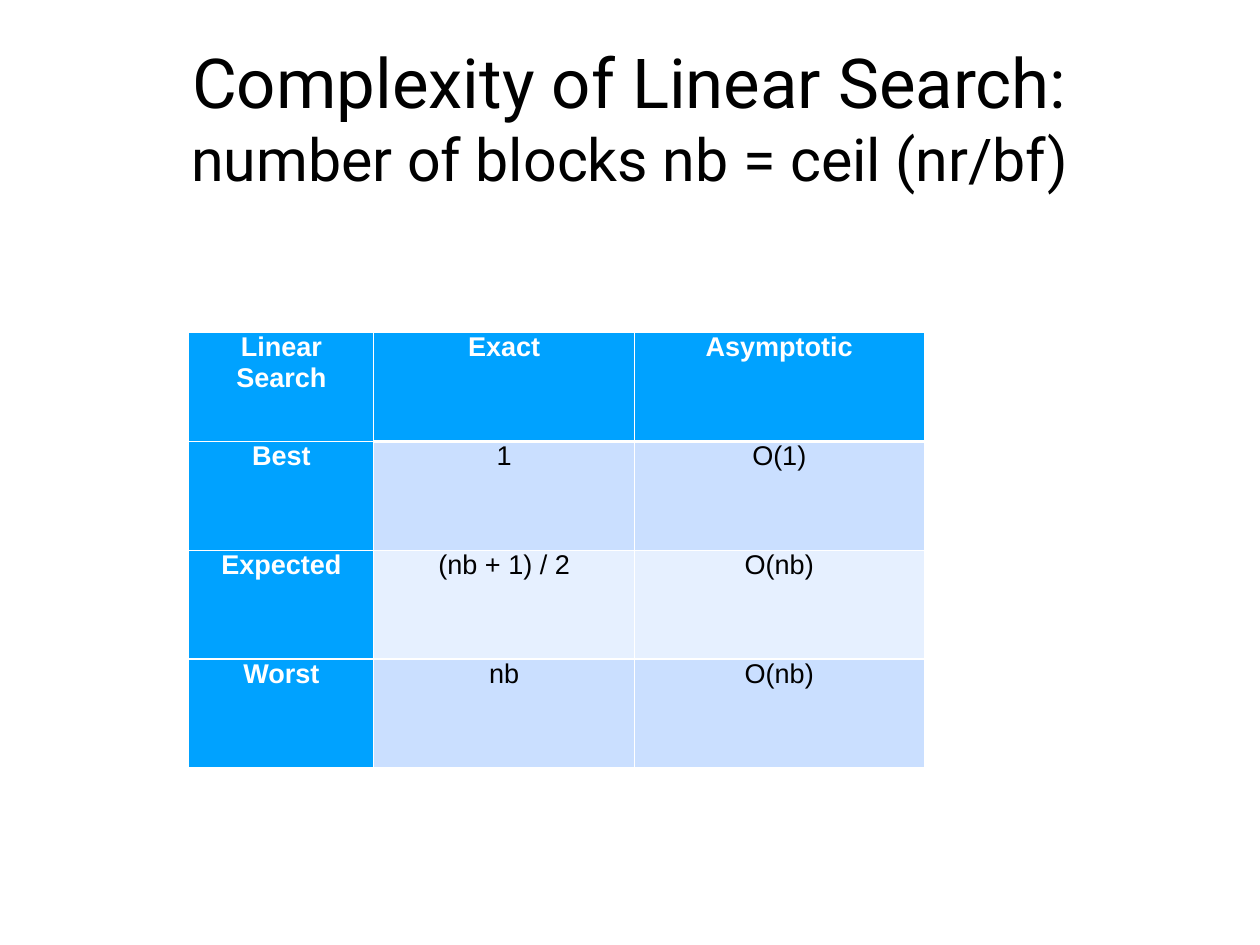
from lxml import etree
from pptx import Presentation
from pptx.dml.color import RGBColor
from pptx.enum import text
from pptx.oxml.ns import qn
from pptx.util import Pt

TITLE = [("Complexity of Linear Search:", 56), ("number of blocks nb = ceil (nr/bf)", 48)]
ROWS = [
    ("Linear\nSearch", "Exact", "Asymptotic"),
    ("Best", "1", "O(1)"),
    ("Expected", "(nb + 1) / 2", "O(nb)"),
    ("Worst", "nb", "O(nb)"),
]
COLORS = {
    "heading": "00A2FF",
    "odd": "CADFFF",
    "even": "E6F0FF",
    "light": "FFFFFF",
    "dark": "000000",
}
COLUMN_WIDTHS = [150.5, 211.7, 235.4]
ROW_HEIGHT = 88.55
TABLE_LEFT, TABLE_TOP = 153.4, 270


def color(name):
    return RGBColor.from_string(COLORS[name])


def set_margins(holder, size):
    for side in ("left", "top", "right", "bottom"):
        setattr(holder, f"margin_{side}", Pt(size))


def format_paragraph(para, font, size, ink, bold=False):
    para.alignment = text.PP_ALIGN.CENTER
    for span in para.runs:
        span.font.name = font
        span.font.size = Pt(size)
        span.font.bold = bold
        span.font.color.rgb = color(ink)


def add_border(cell, side, width):
    """Draw one cell edge; side is L, R, T or B. Call before filling the cell."""
    line = etree.SubElement(cell._tc.get_or_add_tcPr(), qn(f"a:ln{side}"), w=str(Pt(width)))
    fill = etree.SubElement(line, qn("a:solidFill"))
    etree.SubElement(fill, qn("a:srgbClr"), val=COLORS["light"])


def add_title(page):
    title = page.shapes.title
    title.left, title.top, title.width, title.height = Pt(74.9), Pt(20.9), Pt(874), Pt(146.9)
    frame = title.text_frame
    frame.auto_size = text.MSO_AUTO_SIZE.NONE
    frame.vertical_anchor = text.MSO_ANCHOR.MIDDLE
    set_margins(frame, 4.3)
    frame.text = "\n".join(line for line, _ in TITLE)
    for para, (_, size) in zip(frame.paragraphs, TITLE):
        format_paragraph(para, "Roboto", size, "dark")


def format_cell(cell, row, column):
    heading = row == 0 or column == 0
    rule = 3 if column else 1  # the line under the header starts at the second column
    set_margins(cell, 0)
    cell.vertical_anchor = text.MSO_ANCHOR.TOP
    for para in cell.text_frame.paragraphs:
        format_paragraph(para, "Arial", 22, "light" if heading else "dark", heading)
    edges = {"L": 1, "R": 1, "T": rule if row == 1 else 1, "B": rule if row == 0 else 1}
    for side, width in edges.items():
        add_border(cell, side, width)
    cell.fill.solid()
    cell.fill.fore_color.rgb = color("heading" if heading else "odd" if row % 2 else "even")


def add_complexity_table(page):
    table = page.shapes.add_table(
        len(ROWS), len(COLUMN_WIDTHS), Pt(TABLE_LEFT), Pt(TABLE_TOP),
        Pt(sum(COLUMN_WIDTHS)), Pt(ROW_HEIGHT * len(ROWS))).table
    for column, width in zip(table.columns, COLUMN_WIDTHS):
        column.width = Pt(width)
    for r, labels in enumerate(ROWS):
        table.rows[r].height = Pt(ROW_HEIGHT)
        for c, label in enumerate(labels):
            cell = table.cell(r, c)
            cell.text_frame.text = label
            format_cell(cell, r, c)


def main():
    deck = Presentation()
    deck.slide_width, deck.slide_height = Pt(1024), Pt(768)
    page = deck.slides.add_slide(deck.slide_layouts[5])
    add_title(page)
    add_complexity_table(page)
    deck.save("out.pptx")


if __name__ == "__main__":
    main()
